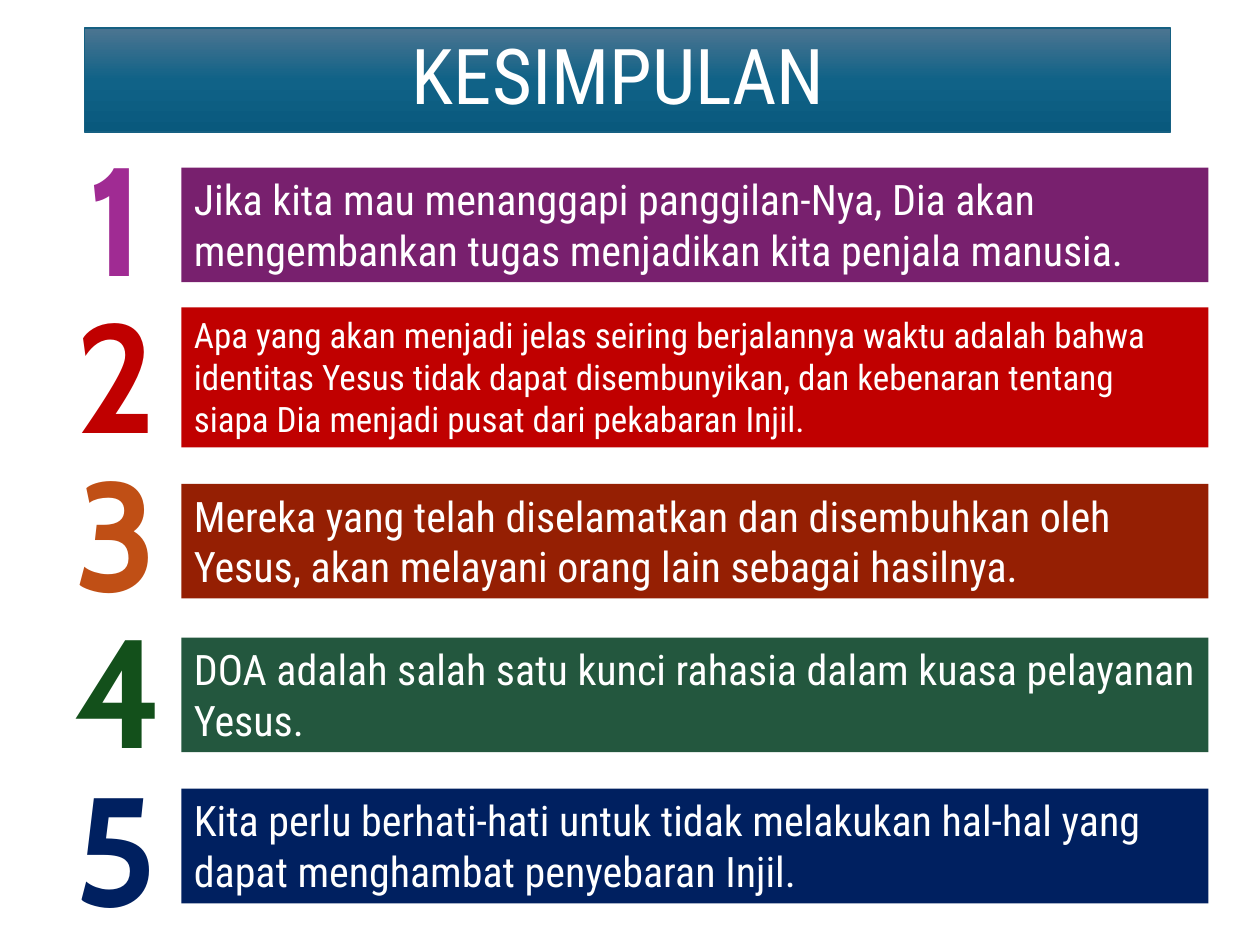
import copy
import dataclasses

import pptx
import pptx.dml.color
import pptx.enum.shapes
import pptx.enum.text
import pptx.oxml
import pptx.oxml.ns
import pptx.util


@dataclasses.dataclass(frozen=True)
class Theme:
    """Colours, fonts and type sizes of the slide."""
    white: str = "FFFFFF"
    title_line: str = "156082"
    title_stops: tuple = ((0, "4C7591"), (0.5, "106287"), (1, "09597D"))
    body_font: str = "Roboto Condensed"
    number_font: str = "Cabin"
    title_size: int = 44
    number_size: int = 88
    large: int = 24
    small: int = 20


@dataclasses.dataclass(frozen=True)
class Box:
    """Rectangle measured in grid columns and rows."""
    x: float
    y: float
    w: float
    h: float

    def inside(self, dx, dy, w, h):
        """Return a box offset from this box's top left corner."""
        return Box(self.x + dx, self.y + dy, w, h)

    def emu(self):
        """Return left, top, width and height as lengths."""
        return [pptx.util.Inches(v * UNIT) for v in (self.x, self.y, self.w, self.h)]


THEME = Theme()
UNIT = 0.1
COLUMNS, ROWS = 100, 75
ROW_TOP, ROW_PITCH = 9.2, 12.5

# number colour, bar colour, bar offset, bar height, type size, text
CONCLUSIONS = (
    ("A02B93", "78206E", 4.1, 9.1, THEME.large,
     "Jika kita mau menanggapi panggilan-Nya, Dia akan mengembankan tugas "
     "menjadikan kita penjala manusia."),
    ("C00000", "C00000", 2.7, 11.1, THEME.small,
     "Apa yang akan menjadi jelas seiring berjalannya waktu adalah bahwa "
     "identitas Yesus tidak dapat disembunyikan, dan kebenaran tentang siapa "
     "Dia menjadi pusat dari pekabaran Injil."),
    ("C04F15", "951F03", 4.2, 9.1, THEME.large,
     "Mereka yang telah diselamatkan dan disembuhkan oleh Yesus, akan melayani "
     "orang lain sebagai hasilnya."),
    ("13501B", "23573E", 3.9, 9.1, THEME.large,
     "DOA adalah salah satu kunci rahasia dalam kuasa pelayanan Yesus."),
    ("002060", "002060", 3.4, 9.1, THEME.large,
     "Kita perlu berhati-hati untuk tidak melakukan hal-hal yang dapat "
     "menghambat penyebaran Injil."),
)


def rgb(value):
    """Return a colour from its hex digits."""
    return pptx.dml.color.RGBColor.from_string(value)


def add_run(p, text, font, size, color):
    """Add one styled run to a paragraph."""
    r = p.add_run()
    r.text = text
    r.font.name, r.font.size = font, pptx.util.Pt(size)
    r.font.color.rgb = rgb(color)
    return r


def add_rect(s, box):
    """Add a plain rectangle without a shadow."""
    sp = s.shapes.add_shape(pptx.enum.shapes.MSO_SHAPE.RECTANGLE, *box.emu())
    sp.shadow.inherit = False
    sp.text_frame.word_wrap = True
    return sp


def add_title(s, box):
    """Place the gradient title banner."""
    sp = add_rect(s, box)
    sp.line.color.rgb = rgb(THEME.title_line)
    sp.line.width = pptx.util.Pt(1)
    sp.fill.gradient()
    sp.fill.gradient_angle = 270
    stops = sp._element.spPr.find(".//" + pptx.oxml.ns.qn("a:gsLst"))
    stops.append(copy.deepcopy(stops[0]))
    for stop, (position, color) in zip(sp.fill.gradient_stops, THEME.title_stops):
        stop.position, stop.color.rgb = position, rgb(color)
    tf = sp.text_frame
    tf.vertical_anchor = pptx.enum.text.MSO_ANCHOR.MIDDLE
    p = tf.paragraphs[0]
    p.alignment, p.line_spacing = pptx.enum.text.PP_ALIGN.CENTER, 0.9
    add_run(p, "KESIMPULAN ", THEME.body_font, THEME.title_size, THEME.white)


def add_number(s, box, text, color):
    """Place a large outlined numeral."""
    tf = s.shapes.add_textbox(*box.emu()).text_frame
    tf.word_wrap = False
    tf.auto_size = pptx.enum.text.MSO_AUTO_SIZE.SHAPE_TO_FIT_TEXT
    p = tf.paragraphs[0]
    p.alignment = pptx.enum.text.PP_ALIGN.CENTER
    r = add_run(p, text, THEME.number_font, THEME.number_size, color)
    r.font.bold = True
    r.font._element.insert(0, pptx.oxml.parse_xml(
        f'<a:ln {pptx.oxml.ns.nsdecls("a")} w="{pptx.util.Pt(0.75)}">'
        f'<a:solidFill><a:srgbClr val="{THEME.white}"/></a:solidFill></a:ln>'))


def add_bar(s, box, text, fill, size):
    """Place a coloured bar holding one conclusion."""
    sp = add_rect(s, box)
    sp.fill.solid()
    sp.fill.fore_color.rgb = rgb(fill)
    sp.line.fill.background()
    tf = sp.text_frame
    tf.auto_size = pptx.enum.text.MSO_AUTO_SIZE.SHAPE_TO_FIT_TEXT
    tf.vertical_anchor = pptx.enum.text.MSO_ANCHOR.TOP
    p = tf.paragraphs[0]
    p.alignment = pptx.enum.text.PP_ALIGN.LEFT
    add_run(p, text, THEME.body_font, size, THEME.white)


def add_conclusion(s, box, number, item):
    """Place a numeral and its bar inside a row."""
    number_color, bar_color, offset, height, size, text = item
    add_number(s, box.inside(0, 0, 8.6, box.h), str(number), number_color)
    add_bar(s, box.inside(9.5, offset, box.w - 9.5, height), text, bar_color, size)


def main():
    """Build and save the slide."""
    prs = pptx.Presentation()
    prs.slide_width = pptx.util.Inches(COLUMNS * UNIT)
    prs.slide_height = pptx.util.Inches(ROWS * UNIT)
    s = prs.slides.add_slide(prs.slide_layouts[6])
    add_title(s, Box(6.7, 2.2, 86.2, 8.3))
    for i, item in enumerate(CONCLUSIONS):
        add_conclusion(s, Box(4.9, ROW_TOP + i * ROW_PITCH, 91, 15.8), i + 1, item)
    prs.save("out.pptx")


if __name__ == "__main__":
    main()
